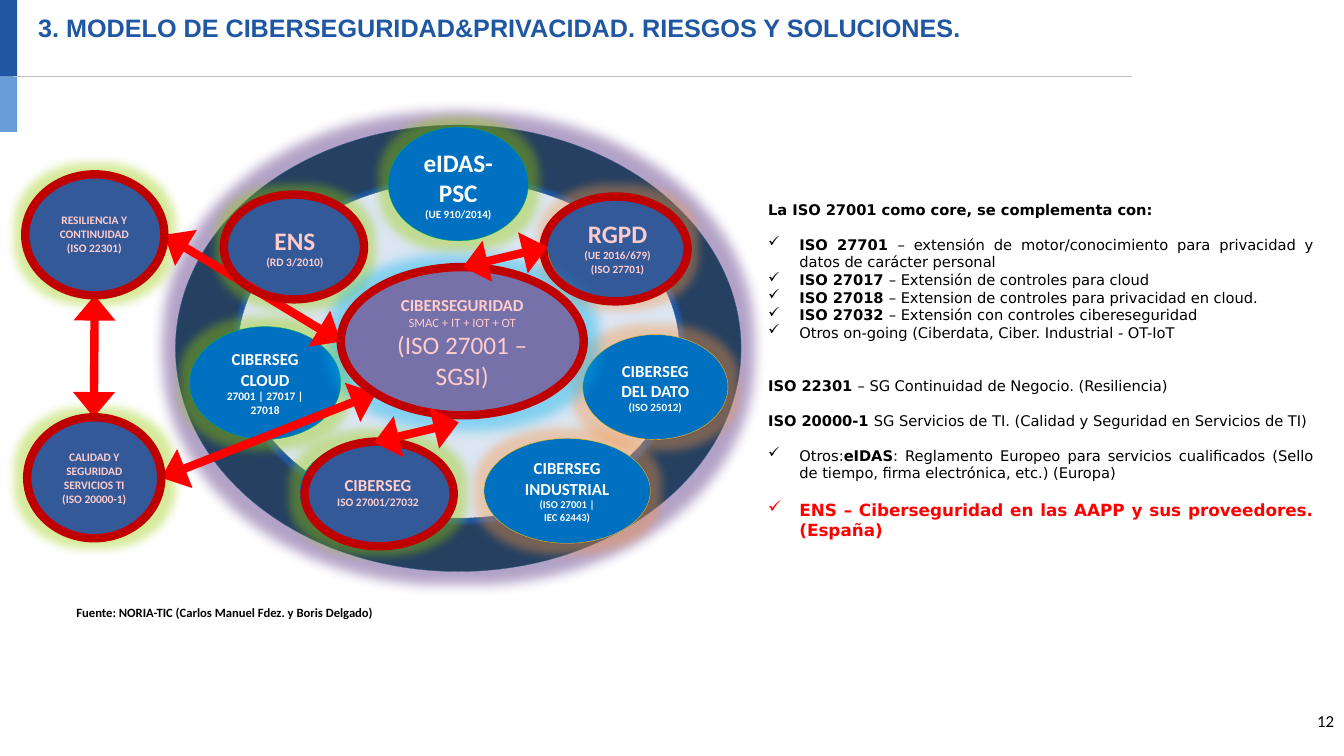
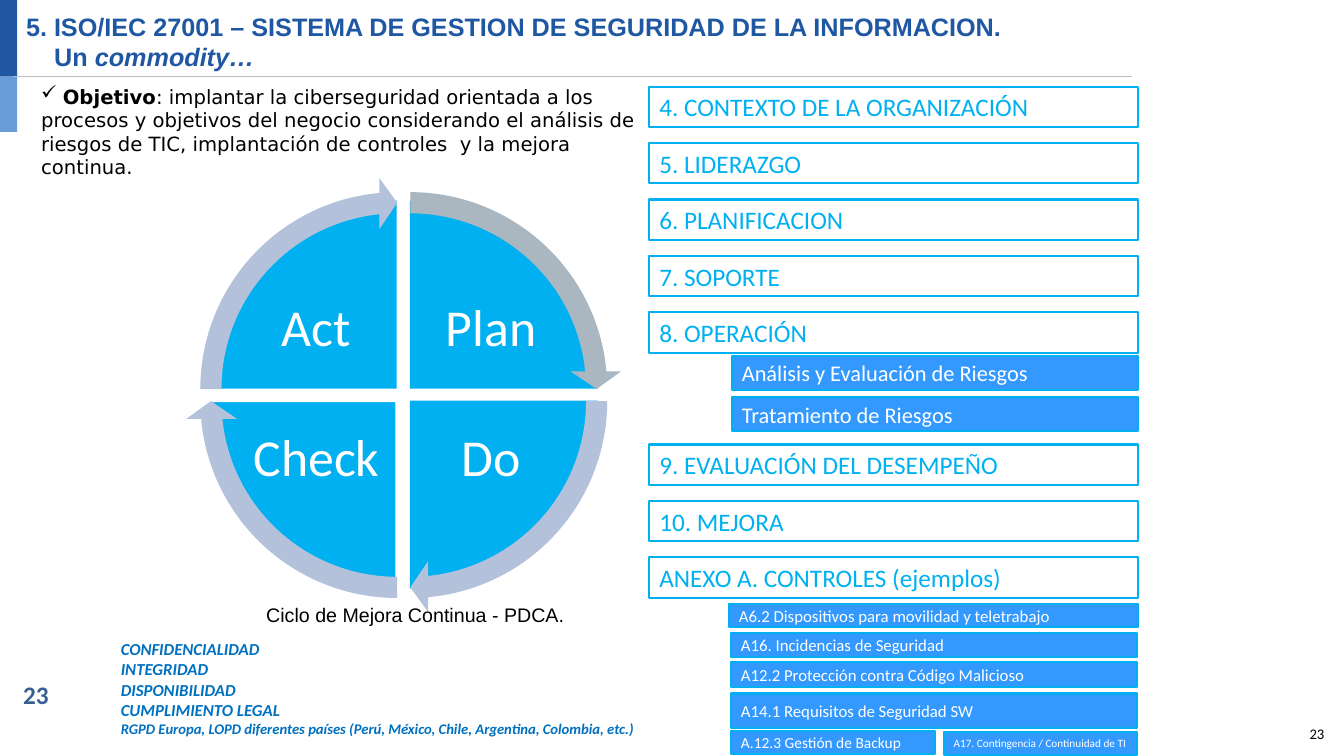
from lxml.etree import SubElement
from pptx import Presentation
from pptx.dml.color import RGBColor
from pptx.enum.shapes import MSO_CONNECTOR, MSO_SHAPE
from pptx.enum.text import MSO_ANCHOR, PP_ALIGN
from pptx.oxml.ns import qn
from pptx.util import Inches, Pt

rgb = RGBColor.from_string
NAVY, SKY, RED, WHITE, BLACK = "1F57A3", "00B0F0", "FF0000", "FFFFFF", "000000"
BLUE, GREEN, AMBER = "0070C0", "00B050", "FFC000"
LIME, PEACH = "99CC00", "F79646"
LEFT, MID, RIGHT, FULL = PP_ALIGN.LEFT, PP_ALIGN.CENTER, PP_ALIGN.RIGHT, PP_ALIGN.JUSTIFY
OVAL, RECT = MSO_SHAPE.OVAL, MSO_SHAPE.RECTANGLE


def draw(slide, kind, at, fill, line=None, alpha=None, glow=None):
    shape = slide.shapes.add_shape(kind, *map(Inches, at))
    shape.shadow.inherit = False
    shape.fill.solid()
    shape.fill.fore_color.rgb = rgb(fill)
    if line:
        shape.line.color.rgb = rgb(line[0])
        shape.line.width = Pt(line[1])
    else:
        shape.line.fill.background()
    props = shape.element.spPr
    if alpha:
        tone = props.find(qn("a:solidFill")).find(qn("a:srgbClr"))
        SubElement(tone, qn("a:alpha"), val=str(alpha * 1000))
    if glow:
        halo = SubElement(props.find(qn("a:effectLst")), qn("a:glow"), rad=str(Pt(glow[1])))
        tone = SubElement(halo, qn("a:srgbClr"), val=glow[0])
        SubElement(tone, qn("a:alpha"), val=str(glow[2] * 1000))
    return shape


def write(box, look, paras, align=LEFT, anchor=MSO_ANCHOR.TOP):
    frame = box.text_frame
    frame.word_wrap = True
    frame.vertical_anchor = anchor
    for num, (form, *runs) in enumerate(paras):
        para = frame.add_paragraph() if num else frame.paragraphs[0]
        para.alignment = align
        props = para._p.get_or_add_pPr()
        for key, val in form.items():
            if key == "tick":
                props.set("marL", str(Inches(val)))
                props.set("indent", str(-Inches(val)))
                SubElement(props, qn("a:buChar"), char="✓")
            elif key == "inset":
                props.set("marL", str(Inches(val)))
            else:
                setattr(para, key, val)
        for text, more in runs:
            run = para.add_run()
            run.text = text
            for key, val in {**look, **more}.items():
                if key == "color":
                    run.font.color.rgb = rgb(val)
                else:
                    setattr(run.font, key, Pt(val) if key == "size" else val)


deck = Presentation()
deck.slide_width, deck.slide_height = Inches(13.33), Inches(7.5)
blank = deck.slide_layouts[6]
for hold in list(blank.placeholders):
    hold.element.getparent().remove(hold.element)
model = deck.slides.add_slide(blank)
cycle = deck.slides.add_slide(blank)

bands = [
    draw(model, RECT, (-0.03, -0.03, 0.2, 0.79), NAVY),
    draw(model, RECT, (-0.03, 0.76, 0.2, 0.55), "689DDA"),
]
rule = model.shapes.add_connector(
    MSO_CONNECTOR.STRAIGHT, *map(Inches, (0.13, 0.76, 11.23, 0.76)))
rule.line.color.rgb = rgb("BFBFBF")
rule.line.width = Pt(0.75)
SubElement(rule.element.spPr, qn("a:effectLst"))
for part in bands + [rule]:
    blank.shapes.element.append(part.element)

head = {"name": "Arial", "size": 18, "bold": True, "color": NAVY}
titles = [
    (model, (0.28, 0.07, 9.57, 0.36), [
        ({}, ("3. MODELO DE CIBERSEGURIDAD&PRIVACIDAD. RIESGOS Y SOLUCIONES.", {}))]),
    (cycle, (0.16, 0.06, 11, 0.64), [
        ({}, ("5. ISO/IEC 27001 – SISTEMA DE GESTION DE SEGURIDAD DE LA INFORMACION.", {})),
        ({"inset": 0.28}, ("Un ", {}), ("commodity…", {"italic": True}))]),
]
for slide, at, paras in titles:
    write(slide.shapes.add_textbox(*map(Inches, at)), head, paras)

draw(model, OVAL, (1.74, 1.24, 5.61, 4.43), "254061", ("3A5F8C", 0.25), glow=("8064A2", 18, 60))
draw(model, OVAL, (2.36, 1.79, 4.38, 3.35), "DCE6F2", ("3A5F8C", 0.25), glow=(NAVY, 5, 100))

ovals = [
    ((3.85, 1.26, 1.39, 1.13), GREEN, LIME, [("eIDAS-PSC", 18), ("(UE 910/2014)", 7.9)]),
    ((2.97, 4.36, 1.56, 1.04), GREEN, LIME, [("CIBERSEG", 12), ("ISO 27001/27032", 8.2)]),
    ((1.88, 3.24, 1.5, 1.12), GREEN, LIME, [("CIBERSEG CLOUD", 12), ("27001 | 27017 | 27018", 8.2)]),
    ((2.23, 1.93, 1.39, 1.04), GREEN, LIME, [("ENS", 18), ("(RD 3/2010)", 8.2)]),
    ((5.43, 1.93, 1.39, 1.04), AMBER, PEACH,
     [("RGPD", 18), ("(UE 2016/679)", 7.9), ("(ISO 27701)", 7.9)]),
    ((5.78, 3.32, 1.44, 1.04), AMBER, PEACH, [("CIBERSEG DEL DATO", 12), ("(ISO 25012)", 7.9)]),
    ((4.8, 4.35, 1.65, 1.04), AMBER, PEACH,
     [("CIBERSEG", 12), ("INDUSTRIAL", 12), ("(ISO 27001 |", 7.5), ("IEC 62443)", 7.5)]),
    ((0.24, 1.72, 1.39, 1.2), GREEN, LIME,
     [("RESILIENCIA Y CONTINUIDAD", 8.2), ("(ISO 22301)", 8.2)]),
    ((0.24, 4.14, 1.39, 1.2), GREEN, LIME,
     [("CALIDAD Y SEGURIDAD SERVICIOS TI", 8.2), ("(ISO 20000-1)", 8.2)]),
]
bold = {"name": "Calibri", "bold": True, "color": WHITE}
for at, edge, glow, lines in ovals:
    oval = draw(model, OVAL, at, BLUE, (edge, 0.25), glow=(glow, 14, 40))
    write(oval, bold, [({}, (text, {"size": size})) for text, size in lines],
          MID, MSO_ANCHOR.MIDDLE)

core = draw(model, OVAL, (3.38, 2.66, 2.41, 1.47), "558ED5", ("3A5F8C", 2), glow=(SKY, 18, 40))
write(core, bold, [
    ({}, ("CIBERSEGURIDAD", {"size": 12})),
    ({}, ("SMAC + IT + IOT + OT", {"size": 9, "bold": False})),
    ({}, ("(ISO 27001 – SGSI)", {"size": 18, "bold": False})),
], MID, MSO_ANCHOR.MIDDLE)

marks = [
    ("arrow", 1.6, 4.74, 3.73, 3.9),
    ("arrow", 1.63, 2.33, 3.38, 3.39),
    ("arrow", 0.94, 2.93, 0.93, 4.14),
    ("ring", 3.38, 2.65, 2.41, 1.47),
    ("ring", 3.02, 4.38, 1.48, 1.04),
    ("ring", 0.27, 4.14, 1.33, 1.2),
    ("ring", 0.25, 1.73, 1.38, 1.2),
    ("ring", 5.39, 1.95, 1.43, 1.04),
    ("ring", 2.22, 1.93, 1.39, 1.04),
    ("arrow", 5.43, 2.45, 4.59, 2.65),
    ("arrow", 4.55, 4.19, 3.71, 4.39),
]
for kind, *at in marks:
    if kind == "ring":
        draw(model, OVAL, at, RED, ("C00000", 6), alpha=20)
        continue
    arrow = model.shapes.add_connector(MSO_CONNECTOR.STRAIGHT, *map(Inches, at))
    arrow.line.color.rgb = rgb(RED)
    arrow.line.width = Pt(6)
    for end in ("a:headEnd", "a:tailEnd"):
        SubElement(arrow.line._ln, qn(end), type="triangle", w="lg", len="med")
    SubElement(arrow.element.spPr, qn("a:effectLst"))

credit = draw(model, RECT, (0.66, 5.95, 3.4, 0.25), WHITE)
write(credit, {**bold, "size": 9, "color": BLACK},
      [({}, ("Fuente: NORIA-TIC (Carlos Manuel Fdez. y Boris Delgado)", {}))],
      anchor=MSO_ANCHOR.MIDDLE)

tick = {"tick": 0.31}
gap = {"space_before": Pt(12.5)}
strong = {"bold": True}
notes = [
    ({}, ("La ISO 27001 como core, se complementa con:", strong)),
    ({**tick, **gap}, ("ISO 27701 ", strong),
     ("– extensión de motor/conocimiento para privacidad y datos de carácter personal", {})),
    (tick, ("ISO 27017 ", strong), ("– Extensión de controles para cloud", {})),
    (tick, ("ISO 27018 ", strong), ("– Extension de controles para privacidad en cloud.", {})),
    (tick, ("ISO 27032 ", strong), ("– Extensión con controles cibereseguridad", {})),
    (tick, ("Otros on-going (Ciberdata, Ciber. Industrial - OT-IoT", {})),
    ({"space_before": Pt(25)}, ("ISO 22301 ", strong),
     ("– SG Continuidad de Negocio. (Resiliencia)", {})),
    (gap, ("ISO 20000-1 ", strong),
     ("SG Servicios de TI. (Calidad y Seguridad en Servicios de TI)", {})),
    ({**tick, **gap}, ("Otros:", {}), ("eIDAS", strong),
     (": Reglamento Europeo para servicios cualificados (Sello de tiempo, firma electrónica, "
      "etc.) (Europa)", {})),
    ({**tick, **gap}, ("ENS – Ciberseguridad en las AAPP y sus proveedores. (España)",
                       {"bold": True, "size": 12, "color": RED})),
]
body = {"name": "DejaVu Sans", "size": 10.5, "color": BLACK}
write(model.shapes.add_textbox(*map(Inches, (7.52, 1.94, 5.61, 3.6))), body, notes, FULL)

plain = {"name": "Calibri", "color": WHITE}
steps = [("Plan", 1, 0), ("Do", 1, 1), ("Check", 0, 1), ("Act", 0, 0)]
for num, (name, col, row) in enumerate(steps):
    start = (162 + 54 * num) % 216
    stop = (start + 54) % 216
    left, top = 2.07 + 0.13 * col, 1.99 + 0.12 * row
    pie = draw(cycle, MSO_SHAPE.PIE, (left, top, 3.73, 3.73), SKY,
               (WHITE, 2) if name == "Check" else None)
    pie.adjustments[0], pie.adjustments[1] = start, stop
    label = cycle.shapes.add_textbox(
        *map(Inches, (2.45 + 1.73 * col, 2.76 + 1.29 * row, 1.38, 1.02)))
    for side in ("left", "right", "top", "bottom"):
        setattr(label.text_frame, "margin_" + side, Inches(0.05))
    write(label, {**plain, "size": 37}, [({"line_spacing": 0.9}, (name, {}))],
          MID, MSO_ANCHOR.MIDDLE)
    curve = draw(cycle, MSO_SHAPE.CIRCULAR_ARROW, (left - 0.23, top - 0.23, 4.2, 4.2),
                 "B3C1DB" if num else "AAB6C0")
    for pos, val in enumerate((0.05, 3.28, (stop - 3.28) % 216, start, 0.06)):
        curve.adjustments[pos] = val

heads = [
    (0.86, ["4. CONTEXTO DE LA ORGANIZACIÓN", "5. LIDERAZGO", "6. PLANIFICACION",
            "7. SOPORTE", "8. OPERACIÓN"]),
    (4.41, ["9. EVALUACIÓN DEL DESEMPEÑO", "10. MEJORA", "ANEXO A. CONTROLES (ejemplos)"]),
]
bars = [((6.44, top + 0.56 * num, 4.85, 0.4), 18, text, WHITE, SKY)
        for top, texts in heads for num, text in enumerate(texts)]
subs = [
    ((7.26, 3.53, 4.03, 0.34), 16, "Análisis y Evaluación de Riesgos"),
    ((7.26, 3.94, 4.03, 0.34), 16, "Tratamiento de Riesgos"),
    ((7.23, 5.99, 4.06, 0.23), 12, "A6.2 Dispositivos para movilidad y teletrabajo"),
    ((7.25, 6.28, 4.03, 0.24), 12, "A16. Incidencias de Seguridad"),
    ((7.25, 6.57, 4.03, 0.25), 12, "A12.2 Protección contra Código Malicioso"),
    ((7.25, 6.88, 4.03, 0.34), 12, "A14.1 Requisitos de Seguridad SW"),
    ((7.25, 7.25, 2.02, 0.23), 11, "A.12.3 Gestión de Backup"),
    ((9.36, 7.26, 1.92, 0.23), 8, "A17. Contingencia / Continuidad de TI"),
]
bars += [(*sub, "3399FF", WHITE) for sub in subs]
for at, size, text, fill, ink in bars:
    write(draw(cycle, RECT, at, fill, (SKY, 1.5)), {**plain, "size": size, "color": ink},
          [({}, (text, {}))], anchor=MSO_ANCHOR.MIDDLE)

goals = [("CONFIDENCIALIDAD", 12), ("INTEGRIDAD", 12), ("DISPONIBILIDAD", 12),
         ("CUMPLIMIENTO LEGAL", 12),
         ("RGPD Europa, LOPD diferentes países (Perú, México, Chile, Argentina, Colombia, etc.)",
          10.5)]
texts = [
    (cycle, (1.98, 5.93, 4.28, 0.34), {"name": "Arial", "size": 14, "color": BLACK},
     [({}, ("Ciclo de Mejora Continua - PDCA.", {}))], MID),
    (cycle, (1.1, 6.29, 5.56, 1.09), {**bold, "italic": True, "color": BLUE},
     [({}, (text, {"size": size})) for text, size in goals], LEFT),
    (cycle, (0.31, 0.79, 6.13, 1.04), {**body, "size": 14},
     [({"tick": 0}, (" ", {}), ("Objetivo", strong),
       (": implantar la ciberseguridad orientada a los procesos y objetivos del negocio "
        "considerando el análisis de riesgos de TIC, implantación de controles  y la mejora "
        "continua.", {}))], LEFT),
    (cycle, (0.13, 6.69, 0.81, 0.57), {**bold, "size": 18, "color": "376092"},
     [({}, ("23", {}))], LEFT),
    (cycle, (12.89, 7.14, 0.44, 0.36), {**plain, "size": 10.5, "color": BLACK},
     [({}, ("23", {}))], LEFT),
    (model, (12.92, 7, 0.41, 0.3), {**plain, "size": 12, "color": BLACK},
     [({}, ("12", {}))], RIGHT),
]
for slide, at, look, paras, align in texts:
    write(slide.shapes.add_textbox(*map(Inches, at)), look, paras, align)

deck.save("out.pptx")
